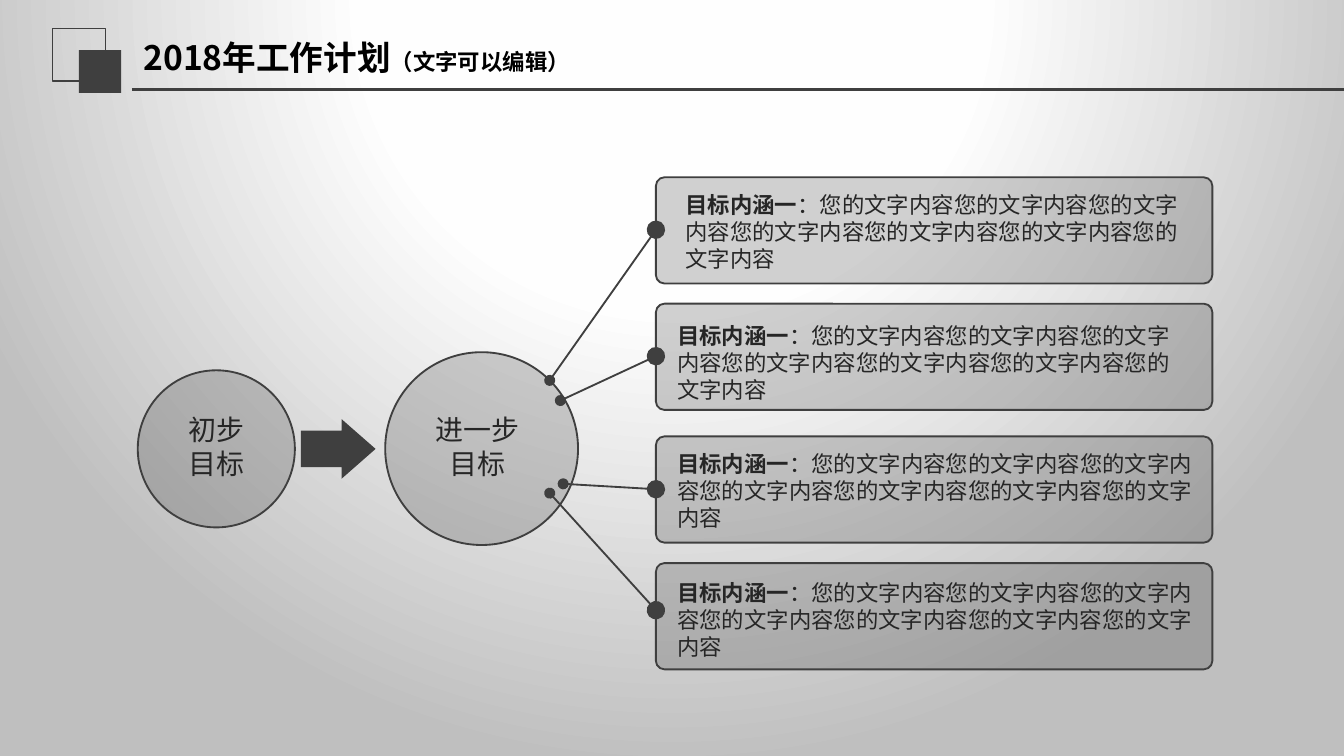
"""Build the 2018 work plan slide with two goals and four goal details."""
from lxml import etree
from pptx import Presentation
from pptx.dml.color import RGBColor
from pptx.enum.shapes import MSO_CONNECTOR, MSO_SHAPE
from pptx.enum.text import MSO_ANCHOR, PP_ALIGN
from pptx.oxml import parse_xml
from pptx.oxml.ns import nsdecls, qn
from pptx.util import Pt

RECTANGLE = MSO_SHAPE.RECTANGLE
ROUNDED = MSO_SHAPE.ROUNDED_RECTANGLE
OVAL = MSO_SHAPE.OVAL
ARROW = MSO_SHAPE.RIGHT_ARROW
STRAIGHT = MSO_CONNECTOR.STRAIGHT
TOP, MIDDLE = MSO_ANCHOR.TOP, MSO_ANCHOR.MIDDLE
LEFT, CENTER = PP_ALIGN.LEFT, PP_ALIGN.CENTER

DARK = RGBColor(0x3F, 0x3F, 0x3F)
INK = RGBColor(0x26, 0x26, 0x26)
BLACK = RGBColor(0, 0, 0)
FONT = "Noto Sans CJK SC"
BACKGROUND_STOPS = [(0, "FFFFFF"), (40, "FEFEFE"), (100, "BFBFBF")]

PANEL_LEFT, PANEL_WIDTH, PANEL_HEIGHT = 351.4, 298.1, 56.9
DETAIL = "：" + "您的文字内容" * 7
PANELS = [
    {"top": 95, "text": (362.2, 99.4, 276.5, 49), "start": (294.5, 203.8), "end": 123.1},
    {"top": 162.7, "text": (357.8, 169.9, 280.8, 49), "start": (300.2, 214.6), "end": 190.8},
    {"top": 233.8, "text": (357.8, 238.3, 291.6, 49), "start": (301.7, 259.2), "end": 262.1},
    {"top": 301.7, "text": (357.8, 307.4, 291.6, 40.3), "start": (294.5, 264.2), "end": 326.9},
]


def points(*values):
    """Convert plain numbers to point lengths."""
    return [Pt(value) for value in values]


def paint_background(page):
    """Fill the page with a radial gradient centred above it."""
    page.background.fill.solid()
    properties = page.element.find(".//" + qn("p:bgPr"))
    stops = "".join(
        f'<a:gs pos="{place * 1000}"><a:srgbClr val="{color}"/></a:gs>'
        for place, color in BACKGROUND_STOPS
    )
    gradient = parse_xml(
        f'<a:gradFill {nsdecls("a")} rotWithShape="1"><a:gsLst>{stops}</a:gsLst>'
        '<a:path path="circle"><a:fillToRect l="50000" t="-80000" r="50000" b="180000"/>'
        "</a:path></a:gradFill>"
    )
    properties.replace(properties[0], gradient)


def add_shape(page, kind, box, fill=None, opacity=100, line_width=None, adjustments=()):
    """Add a preset shape with an optional dark fill and outline."""
    shape = page.shapes.add_shape(kind, *points(*box))
    shape.shadow.inherit = False
    for index, value in enumerate(adjustments):
        shape.adjustments[index] = value
    if fill is None:
        shape.fill.background()
    else:
        shape.fill.solid()
        shape.fill.fore_color.rgb = fill
    if opacity < 100:
        color = shape.element.spPr.find(qn("a:solidFill"))[0]
        etree.SubElement(color, qn("a:alpha"), val=str(opacity * 1000))
    if line_width is None:
        shape.line.fill.background()
    else:
        shape.line.color.rgb = DARK
        shape.line.width = Pt(line_width)


def add_line(page, start, end, width=1, dots=False):
    """Add a straight line, optionally with a small and a large end dot."""
    line = page.shapes.add_connector(STRAIGHT, *points(*start, *end))
    line.line.color.rgb = DARK
    line.line.width = Pt(width)
    if dots:
        outline = line.line._get_or_add_ln()
        for tag, size in (("a:headEnd", "med"), ("a:tailEnd", "lg")):
            etree.SubElement(outline, qn(tag), type="oval", w=size, len=size)
    etree.SubElement(line.element.spPr, qn("a:effectLst"))


def add_text(page, box, paragraphs, size=12, color=INK, align=LEFT, anchor=TOP, insets=(5, 2.9)):
    """Add wrapped text; each span is its text and a dict of overrides."""
    frame = page.shapes.add_textbox(*points(*box)).text_frame
    frame.word_wrap = True
    frame.vertical_anchor = anchor
    frame.margin_left = frame.margin_right = Pt(insets[0])
    frame.margin_top = frame.margin_bottom = Pt(insets[1])
    for index, spans in enumerate(paragraphs):
        para = frame.add_paragraph() if index else frame.paragraphs[0]
        para.alignment = align
        for text, style in spans:
            span = para.add_run()
            span.text = text
            span.font.name = style.get("font", FONT)
            span.font.size = Pt(style.get("size", size))
            span.font.bold = style.get("bold", False)
            span.font.color.rgb = color


def add_header(page):
    """Add the square ornament, the rule and the title."""
    add_shape(page, RECTANGLE, (28.2, 15.2, 28.2, 28.2), line_width=0.75)
    add_shape(page, RECTANGLE, (42.2, 26.9, 22.7, 22.9), fill=DARK)
    add_line(page, (70.7, 47.9), (720, 47.9), width=1.25)
    title = [
        ("2018年", {"bold": True}),
        ("工作计划", {"bold": True, "font": "Calibri"}),
        ("（文字可以编辑）", {"bold": True, "font": "Calibri", "size": 12}),
    ]
    add_text(page, (69.8, 15.1, 256.3, 31), [title], size=18, color=BLACK,
             anchor=MIDDLE, insets=(7.2, 3.6))


def add_goal(page, left, top, diameter, label_left, lines):
    """Add a translucent circle with its label."""
    add_shape(page, OVAL, (left, top, diameter, diameter), fill=DARK, opacity=24, line_width=1)
    add_text(page, (label_left, 218.2, 64.1, 44.6), [[(line, {})] for line in lines],
             size=15, align=CENTER)


def add_panel(page, panel):
    """Add a rounded panel with its detail text."""
    add_shape(page, ROUNDED, (PANEL_LEFT, panel["top"], PANEL_WIDTH, PANEL_HEIGHT),
              fill=DARK, opacity=24, line_width=1, adjustments=[0.08])
    add_text(page, panel["text"], [[("目标内涵一", {"bold": True}), (DETAIL, {})]])


def main():
    """Build and save the deck."""
    deck = Presentation()
    deck.slide_width, deck.slide_height = points(720, 405)
    page = deck.slides.add_slide(deck.slide_layouts[6])
    paint_background(page)
    add_header(page)
    add_shape(page, ARROW, (161.2, 224.5, 40, 32), fill=DARK, adjustments=[0.61, 0.57])
    add_goal(page, 73.8, 198.4, 84.2, 84, ["初步", "目标"])
    add_goal(page, 206.4, 188.7, 103.3, 223.7, ["进一步目标"])
    for panel in PANELS:
        add_panel(page, panel)
        add_line(page, panel["start"], (PANEL_LEFT, panel["end"]), dots=True)
    deck.save("out.pptx")


if __name__ == "__main__":
    main()
